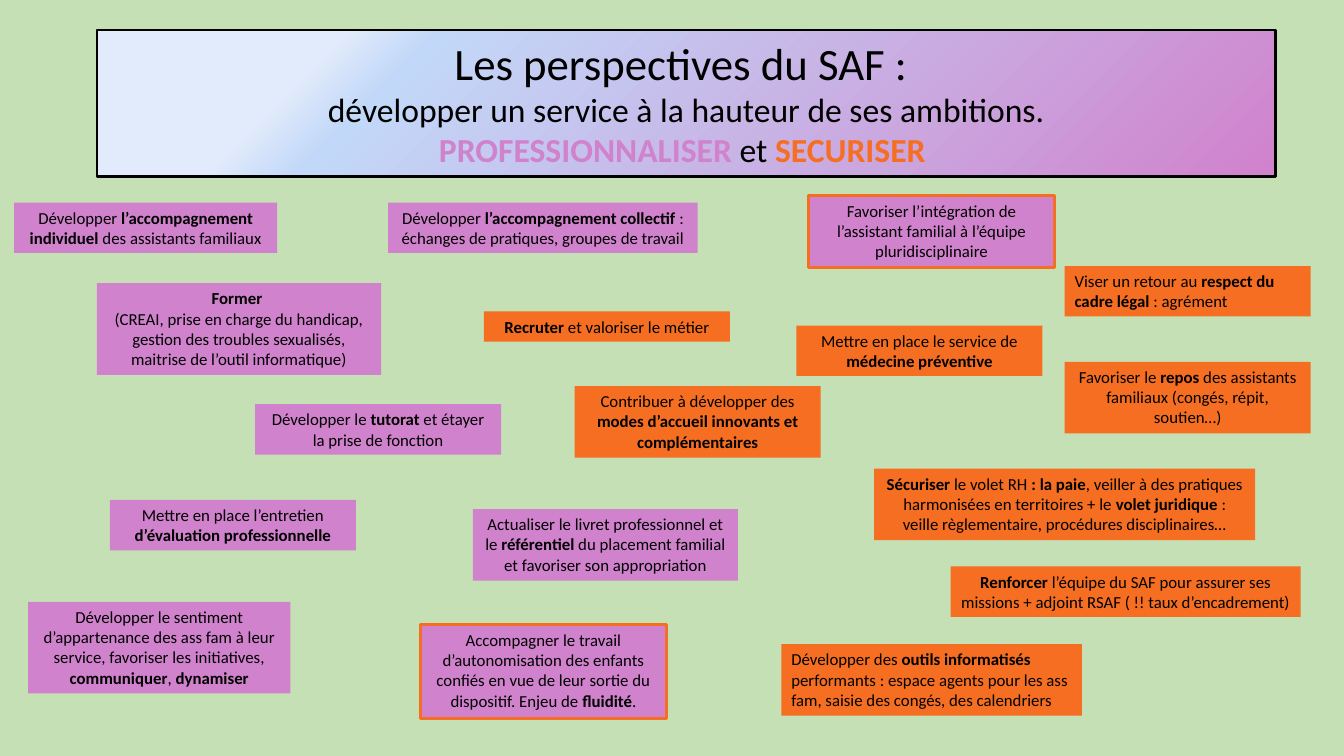
from dataclasses import dataclass

from lxml import etree
from pptx import Presentation
from pptx import util as u
from pptx.dml.color import RGBColor
from pptx.enum import shapes, text
from pptx.oxml.ns import qn

FONT = "Calibri"
BLACK, GREEN, PINK, ORANGE = "000000", "C5E0B4", "D082CC", "F66E22"
CENTER, LEFT = text.PP_ALIGN.CENTER, text.PP_ALIGN.LEFT


@dataclass
class Goal:
    """A goal of the service; **double stars** enclose bold words."""
    left: float
    top: float
    width: float
    height: float
    wording: str
    fill: str = PINK
    outline: str | None = None
    align: text.PP_ALIGN = CENTER


GOALS = [
    Goal(0.14, 2.01, 2.61, 0.5,
         "Développer **l’accompagnement individuel** des assistants familiaux"),
    Goal(8.02, 1.94, 2.44, 0.71,
         "Favoriser l’intégration de l’assistant familial à l’équipe pluridisciplinaire",
         outline=ORANGE),
    Goal(4.8, 3.09, 2.44, 0.3, "**Recruter** et valoriser le métier", ORANGE),
    Goal(7.9, 3.23, 2.44, 0.5,
         "Mettre en place le service de **médecine préventive**", ORANGE),
    Goal(3.85, 2.01, 3.07, 0.5,
         "Développer **l’accompagnement collectif **: échanges de pratiques, "
         "groupes de travail"),
    Goal(0.96, 2.81, 2.82, 0.91,
         "**Former **\n(CREAI, prise en charge du handicap, gestion des troubles "
         "sexualisés, maitrise de l’outil informatique)"),
    Goal(4.17, 6.2, 2.44, 0.93,
         "Accompagner le travail d’autonomisation des enfants confiés en vue de "
         "leur sortie du dispositif. Enjeu de **fluidité**.", outline=ORANGE),
    Goal(1.09, 4.96, 2.44, 0.5,
         "Mettre en place l’entretien **d’évaluation professionnelle**"),
    Goal(4.69, 5.05, 2.63, 0.71,
         "Actualiser le livret professionnel et le **référentiel** du placement "
         "familial et favoriser son appropriation"),
    Goal(5.7, 3.83, 2.44, 0.71,
         "Contribuer à développer des **modes d’accueil innovants et "
         "complémentaires**", ORANGE),
    Goal(9.43, 5.62, 3.47, 0.5,
         "**Renforcer** l’équipe du SAF pour assurer ses missions + adjoint RSAF "
         "( !! taux d’encadrement)", ORANGE),
    Goal(2.53, 4.01, 2.44, 0.5,
         "Développer le **tutorat** et étayer la prise de fonction"),
    Goal(8.67, 4.65, 3.78, 0.71,
         "**Sécuriser** le volet RH **: la paie**, veiller à des pratiques "
         "harmonisées en territoires + le **volet juridique **: veille "
         "règlementaire, procédures disciplinaires…", ORANGE),
    Goal(10.56, 2.64, 2.44, 0.5,
         "Viser un retour au **respect du cadre légal **: agrément",
         ORANGE, align=LEFT),
    Goal(10.56, 3.59, 2.44, 0.71,
         "Favoriser le **repos **des assistants familiaux (congés, répit, "
         "soutien…)", ORANGE),
    Goal(7.75, 6.39, 2.98, 0.71,
         "Développer des **outils informatisés **performants : espace agents "
         "pour les ass fam, saisie des congés, des calendriers",
         ORANGE, align=LEFT),
    Goal(0.28, 5.97, 2.6, 0.91,
         "Développer le sentiment d’appartenance des ass fam à leur service, "
         "favoriser les initiatives, **communiquer**, **dynamiser**"),
]


def rgb(value: str) -> RGBColor:
    return RGBColor.from_string(value)


def add_box(slide, left: float, top: float, width: float, height: float, *,
            fill: str | None = None, outline: str | None = None,
            weight: float = 2.25):
    box = slide.shapes.add_shape(
        shapes.MSO_SHAPE.RECTANGLE, u.Inches(left), u.Inches(top),
        u.Inches(width), u.Inches(height))
    box.shadow.inherit = False
    if fill:
        box.fill.solid()
        box.fill.fore_color.rgb = rgb(fill)
    if outline:
        box.line.color.rgb = rgb(outline)
        box.line.width = u.Pt(weight)
    else:
        box.line.fill.background()
    frame = box.text_frame
    frame.word_wrap = True
    frame.auto_size = text.MSO_AUTO_SIZE.SHAPE_TO_FIT_TEXT
    frame.vertical_anchor = text.MSO_ANCHOR.TOP
    return box


def write(paragraph, wording: str, *, size: float = 12, color: str = BLACK,
          accent: str = BLACK, align: text.PP_ALIGN = CENTER) -> None:
    """Add the wording, with its starred parts bold and in the accent colour."""
    paragraph.alignment = align
    for index, part in enumerate(wording.split("**")):
        if not part:
            continue
        bold = index % 2 == 1
        run = paragraph.add_run()
        run.text = part
        run.font.name = FONT
        run.font.size = u.Pt(size)
        run.font.bold = bold
        run.font.color.rgb = rgb(accent if bold else color)


def set_radial_fill(shape, stops: list[tuple[int, str]]) -> None:
    """Spread a circular gradient from the bottom right corner."""
    shape.fill.background()
    gradient = etree.Element(qn("a:gradFill"), rotWithShape="1")
    stop_list = etree.SubElement(gradient, qn("a:gsLst"))
    for percent, color in stops:
        stop = etree.SubElement(stop_list, qn("a:gs"), pos=str(percent * 1000))
        etree.SubElement(stop, qn("a:srgbClr"), val=color)
    circle = etree.SubElement(gradient, qn("a:path"), path="circle")
    etree.SubElement(circle, qn("a:fillToRect"), l="100000", t="100000")
    properties = shape.element.spPr
    properties.replace(properties.find(qn("a:noFill")), gradient)


def add_title(slide) -> None:
    banner = add_box(slide, 0.96, 0.3, 11.69, 1.45, outline=BLACK, weight=1.75)
    set_radial_fill(banner, [(0, PINK), (74, "C2D8F8"), (81, "E1EBFB")])
    frame = banner.text_frame
    write(frame.paragraphs[0], "Les perspectives du SAF : ", size=32)
    write(frame.add_paragraph(),
          "développer un service à la hauteur de ses ambitions.", size=24)
    aims = frame.add_paragraph()
    write(aims, "**PROFESSIONNALISER **et ", size=24, accent=PINK)
    write(aims, "**SECURISER **", size=24, accent=ORANGE)


def add_goal(slide, goal: Goal) -> None:
    box = add_box(slide, goal.left, goal.top, goal.width, goal.height,
                  fill=goal.fill, outline=goal.outline)
    frame = box.text_frame
    for index, line in enumerate(goal.wording.split("\n")):
        paragraph = frame.add_paragraph() if index else frame.paragraphs[0]
        write(paragraph, line, align=goal.align)


def main() -> None:
    deck = Presentation()
    deck.slide_width, deck.slide_height = u.Inches(13.33), u.Inches(7.5)
    slide = deck.slides.add_slide(deck.slide_layouts[6])

    # Background
    slide.background.fill.solid()
    slide.background.fill.fore_color.rgb = rgb(GREEN)

    # Title banner, then the goals around the slide
    add_title(slide)
    for goal in GOALS:
        add_goal(slide, goal)

    deck.save("out.pptx")


if __name__ == "__main__":
    main()
